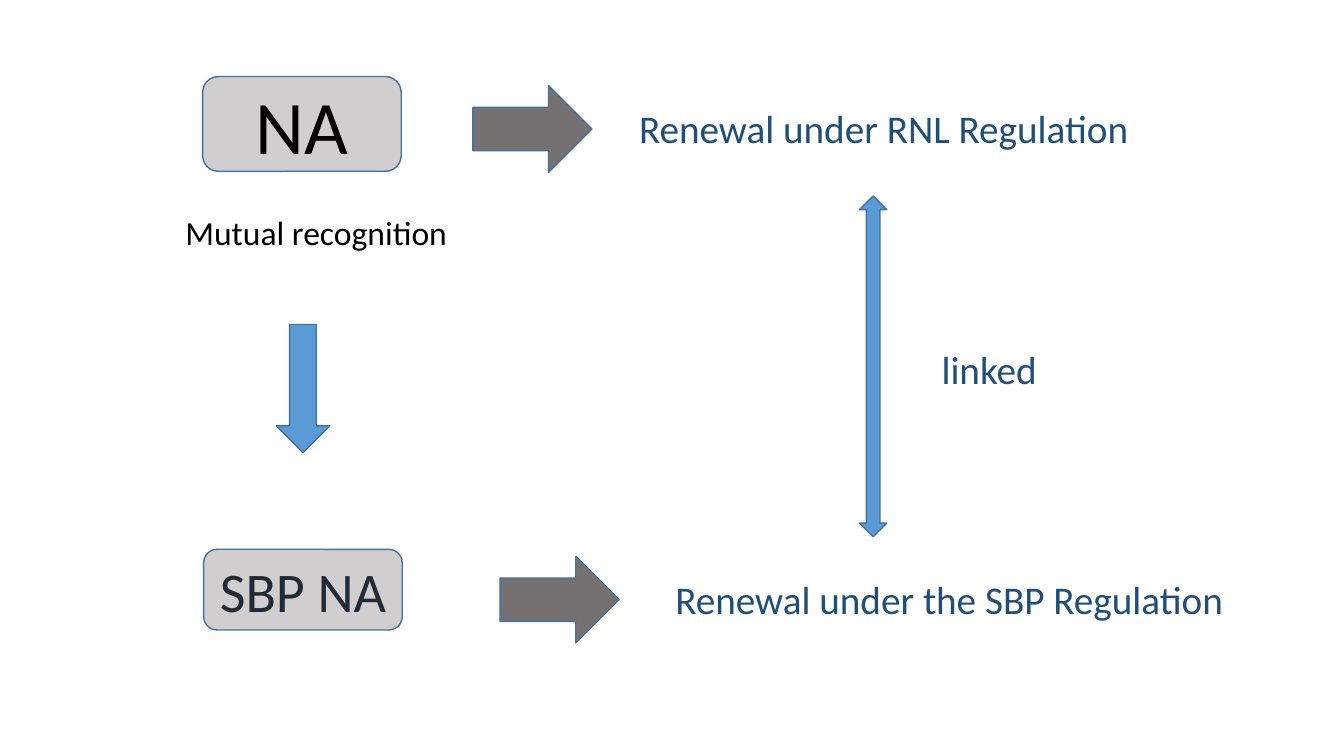
from pptx import Presentation
from pptx.dml.color import RGBColor
from pptx.enum.shapes import MSO_SHAPE
from pptx.enum.text import MSO_ANCHOR, MSO_AUTO_SIZE, PP_ALIGN
from pptx.util import Inches, Pt

ROUNDED = MSO_SHAPE.ROUNDED_RECTANGLE
RIGHT = MSO_SHAPE.RIGHT_ARROW
DOWN = MSO_SHAPE.DOWN_ARROW
BOTH_WAYS = MSO_SHAPE.LEFT_RIGHT_ARROW
LEFT_ALIGN = PP_ALIGN.LEFT
CENTER = PP_ALIGN.CENTER
MIDDLE = MSO_ANCHOR.MIDDLE
FIT_SHAPE = MSO_AUTO_SIZE.SHAPE_TO_FIT_TEXT

BLACK = RGBColor(0x00, 0x00, 0x00)
LIGHT_GREY = RGBColor(0xD0, 0xCE, 0xCE)
DARK_GREY = RGBColor(0x76, 0x71, 0x71)
SLATE = RGBColor(0x22, 0x2A, 0x35)
NAVY = RGBColor(0x1F, 0x4E, 0x79)
BLUE = RGBColor(0x5B, 0x9B, 0xD5)
OUTLINE = RGBColor(0x43, 0x73, 0x9E)


def add_block(page, kind, left, top, width, height, fill):
    block = page.shapes.add_shape(
        kind, Inches(left), Inches(top), Inches(width), Inches(height))
    block.shadow.inherit = False
    block.fill.solid()
    block.fill.fore_color.rgb = fill
    block.line.color.rgb = OUTLINE
    block.line.width = Pt(1)
    return block


def write(frame, text, size, color, align):
    para = frame.paragraphs[0]
    para.alignment = align
    span = para.add_run()
    span.text = text
    span.font.name = "Calibri"
    span.font.size = Pt(size)
    span.font.color.rgb = color


deck = Presentation()
deck.slide_width = Inches(13.33)
deck.slide_height = Inches(7.5)
page = deck.slides.add_slide(deck.slide_layouts[6])

authorisations = [
    ("NA", 2.01, 0.76, 0.94, 54, BLACK),
    ("SBP NA", 2.02, 5.45, 0.8, 40, SLATE),
]
for text, left, top, height, size, color in authorisations:
    box = add_block(page, ROUNDED, left, top, 1.97, height, LIGHT_GREY)
    box.text_frame.vertical_anchor = MIDDLE
    write(box.text_frame, text, size, color, CENTER)

for left, top in [(4.69, 0.85), (4.96, 5.52)]:
    add_block(page, RIGHT, left, top, 1.18, 0.86, DARK_GREY)

labels = [
    ("Mutual recognition", 1.74, 2.05, 2.82, 0.5, 24, BLACK, LEFT_ALIGN, False),
    ("Renewal under RNL Regulation", 6.24, 0.99, 5.11, 0.57, 28, NAVY, LEFT_ALIGN, False),
    ("Renewal under the SBP Regulation", 6.6, 5.66, 5.7, 0.57, 28, NAVY, LEFT_ALIGN, False),
    ("linked", 8.79, 3.38, 2.04, 0.57, 28, NAVY, CENTER, True),
]
for text, left, top, width, height, size, color, align, wrap in labels:
    label = page.shapes.add_textbox(
        Inches(left), Inches(top), Inches(width), Inches(height))
    label.text_frame.word_wrap = wrap
    label.text_frame.auto_size = FIT_SHAPE
    write(label.text_frame, text, size, color, align)

link_arrow = add_block(page, BOTH_WAYS, 6.97, 3.5, 3.38, 0.27, BLUE)
link_arrow.rotation = 90
add_block(page, DOWN, 2.74, 3.22, 0.53, 1.27, BLUE)

deck.save("out.pptx")
